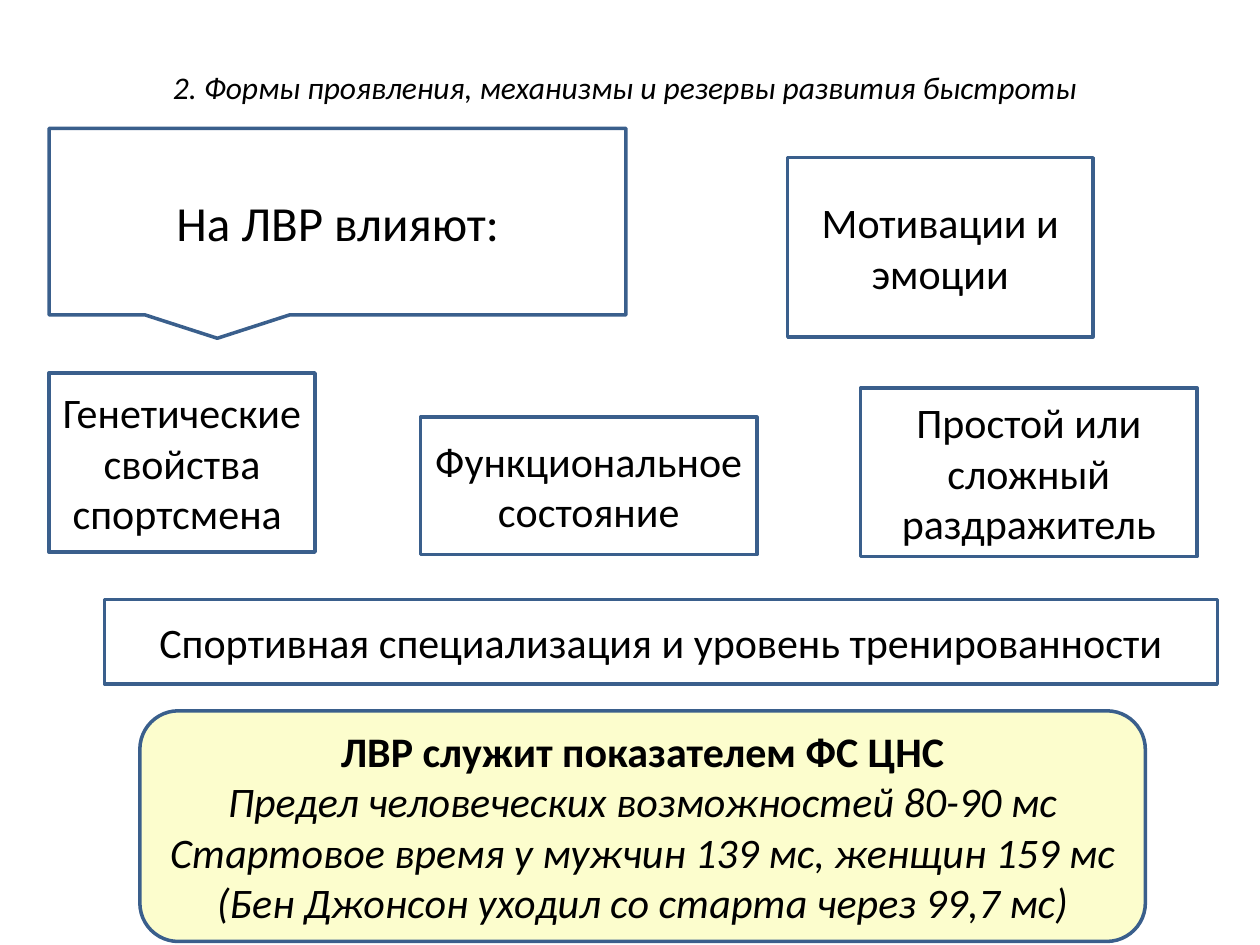
from pptx import Presentation
from pptx.dml.color import RGBColor
from pptx.enum.shapes import MSO_SHAPE as Shape
from pptx.enum.text import MSO_ANCHOR as Anchor, PP_ALIGN as Align
from pptx.util import Cm, Pt

COLORS = {"text": "000000", "outline": "3A5F8C", "box": "FFFFFF", "summary": "FCFDCD"}

# Content: boxes are (left, top, width, height) in cm
HEADING = "2. Формы проявления, механизмы и резервы развития быстроты"
HEADING_BOX = (1.07, 0.76, 23.06, 1.98)

QUESTION = "На ЛВР влияют:"
QUESTION_BOX = (0.99, 2.59, 11.63, 3.76)

SUMMARY = [
    ("ЛВР служит показателем ФС ЦНС", {"bold": True}),
    ("Предел человеческих возможностей 80-90 мс", {"italic": True}),
    ("Стартовое время у мужчин 139 мс, женщин 159 мс", {"italic": True}),
    ("(Бен Джонсон уходил со старта через 99,7 мс)", {"italic": True}),
]
SUMMARY_BOX = (2.82, 14.33, 20.27, 4.65)

FACTORS = [
    ("Простой или сложный раздражитель", (17.35, 7.82, 6.78, 3.4)),
    ("Функциональное состояние", (8.48, 8.41, 6.78, 2.77)),
    ("Генетические свойства спортсмена ", (0.99, 7.52, 5.36, 3.61)),
    ("Спортивная специализация и уровень тренированности", (2.11, 12.09, 22.43, 1.7)),
    ("Мотивации и эмоции", (15.88, 3.18, 6.15, 3.61)),
]


def rgb(name):
    return RGBColor.from_string(COLORS[name])


def write(frame, lines, size):
    """Fill a text frame with centred (text, font format) lines."""
    frame.word_wrap = True
    frame.vertical_anchor = Anchor.MIDDLE
    for index, (text, extra) in enumerate(lines):
        line = frame.paragraphs[0] if index == 0 else frame.add_paragraph()
        line.alignment = Align.CENTER
        run = line.add_run()
        run.text = text
        run.font.color.rgb = rgb("text")
        for attribute, value in {"name": "Calibri", "size": Pt(size), **extra}.items():
            setattr(run.font, attribute, value)


def add_box(slide, kind, box, lines, size=24, fill="box"):
    panel = slide.shapes.add_shape(kind, *map(Cm, box))
    panel.shadow.inherit = False
    panel.fill.solid()
    panel.fill.fore_color.rgb = rgb(fill)
    panel.line.color.rgb = rgb("outline")
    panel.line.width = Pt(2)
    write(panel.text_frame, lines, size)


def main():
    deck = Presentation()
    deck.slide_width, deck.slide_height = Cm(25.4), Cm(19.05)
    slide = deck.slides.add_slide(deck.slide_layouts[5])

    # Heading
    heading = slide.shapes.title
    for side, length in zip(("left", "top", "width", "height"), HEADING_BOX):
        setattr(heading, side, Cm(length))
    write(heading.text_frame, [(HEADING, {"italic": True})], 18)

    # Question callout and summary
    add_box(slide, Shape.RECTANGULAR_CALLOUT, QUESTION_BOX, [(QUESTION, {})], size=28)
    add_box(slide, Shape.ROUNDED_RECTANGLE, SUMMARY_BOX, SUMMARY, fill="summary")

    # Factors
    for factor, box in FACTORS:
        add_box(slide, Shape.FLOWCHART_PROCESS, box, [(factor, {})])

    deck.save("out.pptx")


if __name__ == "__main__":
    main()
